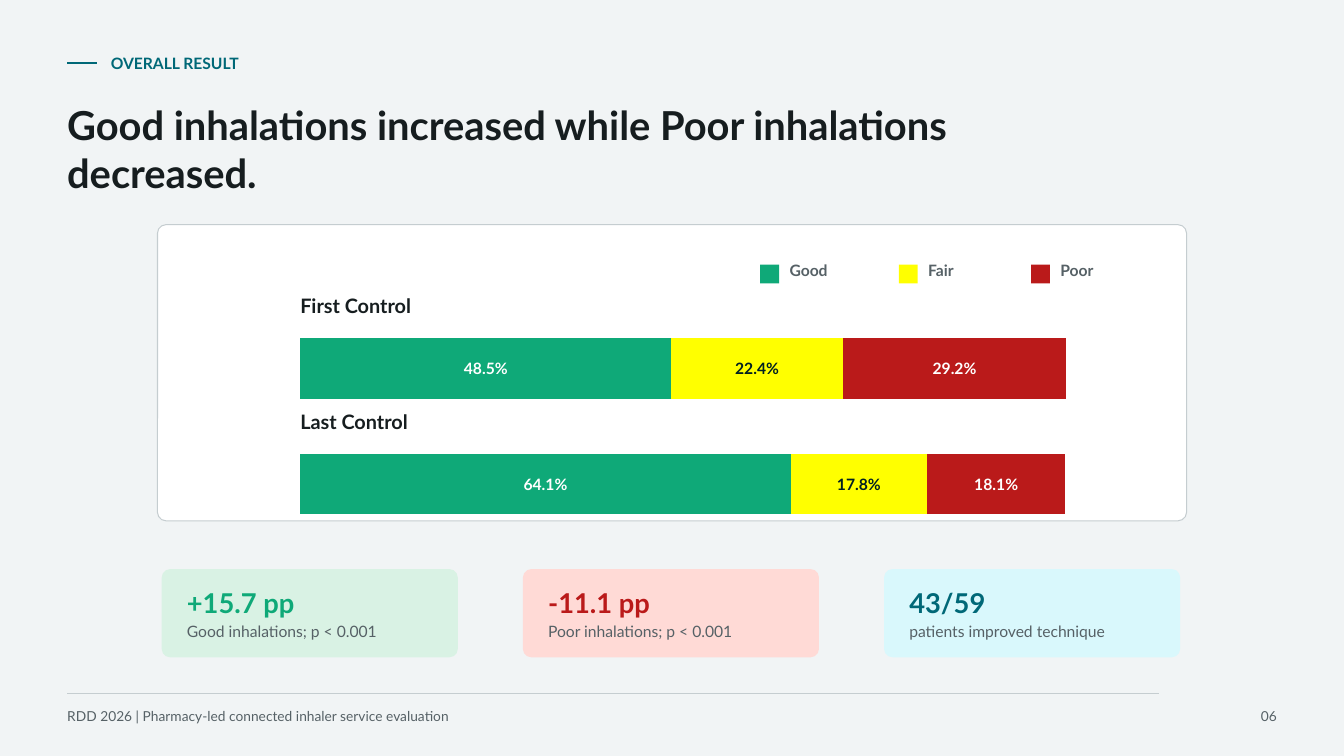
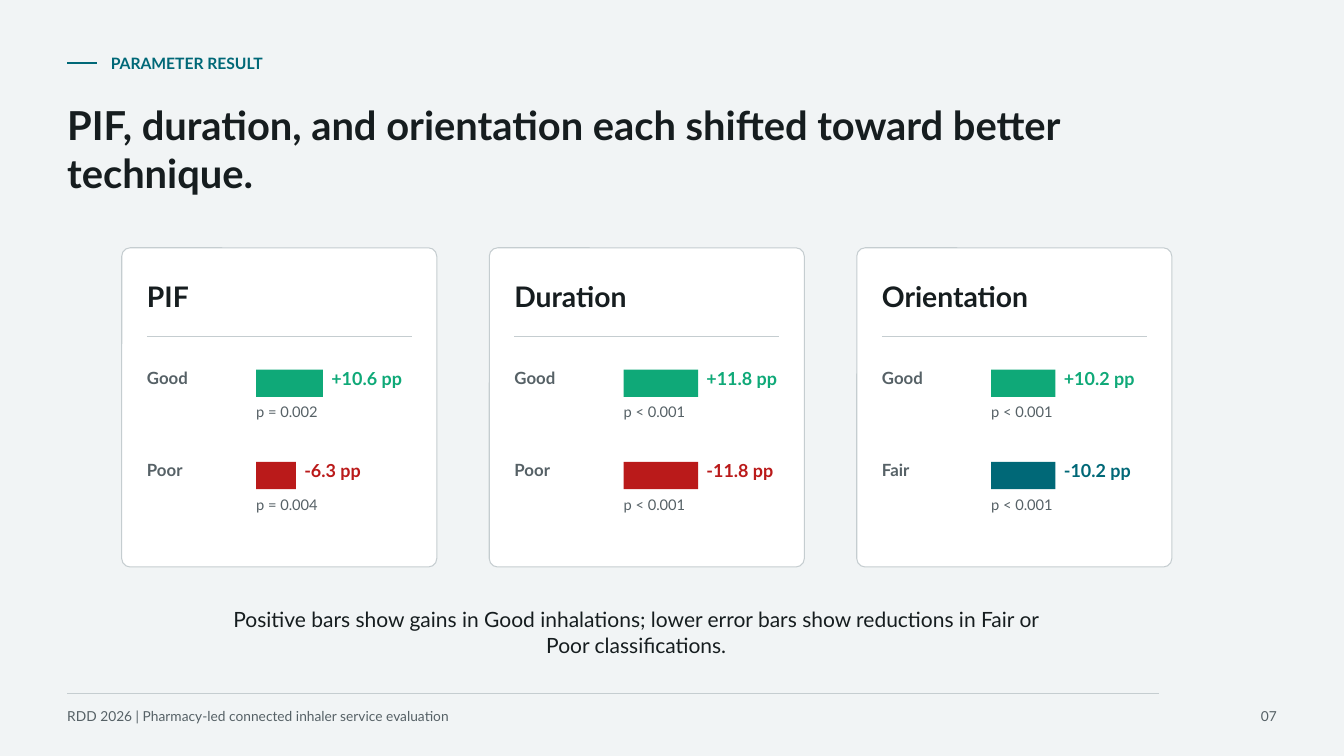
from lxml import etree
from pptx import Presentation
from pptx import util as u
from pptx.chart import data as cd
from pptx.dml.color import RGBColor
from pptx.enum import chart as ch, shapes, text
from pptx.oxml.ns import qn

PAPER = RGBColor(0xF1, 0xF4, 0xF5)
WHITE = RGBColor(0xFF, 0xFF, 0xFF)
INK = RGBColor(0x16, 0x1D, 0x1F)
DARK = RGBColor(0x00, 0x20, 0x22)
MUTED = RGBColor(0x56, 0x61, 0x66)
RULE = RGBColor(0xC5, 0xCD, 0xD0)
TEAL = RGBColor(0x00, 0x68, 0x77)
GREEN = RGBColor(0x0F, 0xA9, 0x78)
YELLOW = RGBColor(0xFF, 0xFF, 0x00)
RED = RGBColor(0xBA, 0x1A, 0x1A)
PALE_GREEN = RGBColor(0xD9, 0xF2, 0xE4)
PALE_RED = RGBColor(0xFF, 0xDA, 0xD6)
PALE_TEAL = RGBColor(0xD9, 0xF8, 0xFC)

FONT = "Lato"
FOOTER = "RDD 2026 | Pharmacy-led connected inhaler service evaluation"
COLS, ROWS = 160, 90
MARGIN = 8
LEFT, CENTER, RIGHT = text.PP_ALIGN.LEFT, text.PP_ALIGN.CENTER, text.PP_ALIGN.RIGHT


class Deck:
    def __init__(self):
        self.prs = Presentation()
        self.prs.slide_width = u.Inches(13.33)
        self.prs.slide_height = u.Inches(7.5)
        fill = self.prs.slide_master.background.fill
        fill.solid()
        fill.fore_color.rgb = PAPER
        self.s = None

    def x(self, cols):
        return round(self.prs.slide_width * cols / COLS)

    def y(self, rows):
        return round(self.prs.slide_height * rows / ROWS)

    def box(self, left, top, width, height):
        return self.x(left), self.y(top), self.x(width), self.y(height)

    def slide(self, number, kicker, title, title_width):
        self.s = self.prs.slides.add_slide(self.prs.slide_layouts[6])
        self.line(MARGIN, 7.5, 3.5, TEAL, 1.5)
        self.text(kicker, 13.2, 6, 53.75, 3, 11.2, TEAL, True,
                  anchor=text.MSO_ANCHOR.MIDDLE)
        self.text(title, MARGIN, 12, title_width, 11.5, 28.5, INK, True)
        self.line(MARGIN, 82.55, 130, RULE)
        self.text(FOOTER, MARGIN, 84.25, 95, 2.75, 9.8, MUTED)
        self.text(number, 145, 84.25, 7, 2.75, 9.8, MUTED, align=RIGHT)

    def text(self, words, left, top, width, height, size, color,
             bold=False, align=LEFT, anchor=text.MSO_ANCHOR.TOP):
        tf = self.s.shapes.add_textbox(*self.box(left, top, width, height)).text_frame
        tf.word_wrap = True
        tf.vertical_anchor = anchor
        tf.margin_left = tf.margin_right = tf.margin_top = tf.margin_bottom = 0
        tf.text = words
        p = tf.paragraphs[0]
        p.alignment = align
        f = p.runs[0].font
        f.name, f.size, f.bold = FONT, u.Pt(size), bold
        f.color.rgb = color

    def block(self, left, top, width, height, fill, radius=None, border=None):
        kind = shapes.MSO_SHAPE.ROUNDED_RECTANGLE if radius else shapes.MSO_SHAPE.RECTANGLE
        sp = self.s.shapes.add_shape(kind, *self.box(left, top, width, height))
        sp.shadow.inherit = False
        sp.fill.solid()
        sp.fill.fore_color.rgb = fill
        if radius:
            sp.adjustments[0] = radius / min(width, height)
        if border:
            sp.line.color.rgb = border
            sp.line.width = u.Pt(0.75)
        else:
            sp.line.fill.background()

    def card(self, left, top, width, height):
        self.block(left, top, width, height, WHITE, 1, RULE)

    def line(self, left, top, width, color, weight=0.75):
        y = self.y(top)
        c = self.s.shapes.add_connector(
            shapes.MSO_CONNECTOR.STRAIGHT, self.x(left), y, self.x(left + width), y)
        c.line.color.rgb = color
        c.line.width = u.Pt(weight)
        etree.SubElement(c._element.spPr, qn("a:effectLst"))

    def stacked_bars(self, left, top, width, height, categories, series, gap):
        data = cd.CategoryChartData(number_format='0.0"%"')
        data.categories = categories
        for name, values, *_ in series:
            data.add_series(name, values)
        chart = self.s.shapes.add_chart(
            ch.XL_CHART_TYPE.BAR_STACKED, *self.box(left, top, width, height), data).chart
        chart.has_legend = chart.has_title = False
        chart.font.name, chart.font.size, chart.font.bold = FONT, u.Pt(11.2), True
        chart.category_axis.reverse_order = True
        chart.category_axis.visible = False
        axis = chart.value_axis
        axis.minimum_scale = 0
        axis.maximum_scale = max(map(sum, zip(*(values for _, values, *_ in series))))
        axis.has_major_gridlines = False
        axis.visible = False
        plot = chart.plots[0]
        plot.gap_width, plot.overlap, plot.vary_by_categories = gap, 100, False
        for bar, (_, _, fill, ink) in zip(plot.series, series):
            bar.format.fill.solid()
            bar.format.fill.fore_color.rgb = fill
            labels = bar.data_labels
            labels.show_value = True
            labels.position = ch.XL_LABEL_POSITION.CENTER
            labels.number_format = '0.0"%"'
            labels.number_format_is_linked = False
            labels.font.name, labels.font.size, labels.font.bold = FONT, u.Pt(11.2), True
            labels.font.color.rgb = ink
        self.fill_frame(chart)

    def fill_frame(self, chart):
        area = chart._chartSpace.chart.plotArea
        for old in area.findall(qn("c:layout")):
            area.remove(old)
        layout = etree.Element(qn("c:layout"))
        manual = etree.SubElement(layout, qn("c:manualLayout"))
        for tag, val in (("layoutTarget", "inner"), ("xMode", "edge"), ("yMode", "edge"),
                         ("x", "0"), ("y", "0"), ("w", "1"), ("h", "1")):
            etree.SubElement(manual, qn("c:" + tag)).set("val", val)
        area.insert(0, layout)

    def legend(self, left, top, name, color):
        self.block(left, top + 0.5, 2.25, 2.25, color)
        self.text(name, left + 3.5, top, 11, 3, 11.2, MUTED, True)

    def stat(self, left, top, value, caption, color, fill):
        self.block(left, top, 35.25, 10.5, fill, 1)
        self.text(value, left + 3, top + 2, 28, 3.75, 19.5, color, True)
        self.text(caption, left + 3, top + 6.25, 28, 2.75, 11.2, MUTED)

    def change(self, left, top, name, points, p_value, color):
        bar_left, bar_width = left + 13, abs(points) * 0.75
        self.text(name, left, top, 12, 2.75, 12, MUTED, True)
        self.block(bar_left, top + 0.25, bar_width, 3.25, color)
        self.text(f"{points:+.1f} pp", bar_left + bar_width + 1, top, 11, 2.75,
                  12.8, color, True)
        self.text(p_value, bar_left, top + 4.25, 18.75, 2.5, 10.5, MUTED)

    def parameter(self, left, top, name, changes):
        inner = left + 3
        self.card(left, top, 37.5, 38)
        self.text(name, inner, top + 3.75, 30, 3.75, 20.2, INK, True)
        self.line(inner, top + 10.55, 31.5, RULE)
        for i, change in enumerate(changes):
            self.change(inner, top + 14.25 + 11 * i, *change)


def overall(d):
    d.slide("06", "OVERALL RESULT",
            "Good inhalations increased while Poor inhalations decreased.", 115)
    d.card(18.75, 26.75, 122.5, 35.25)
    series = [("Good", (48.5, 64.1), GREEN, WHITE),
              ("Fair", (22.4, 17.8), YELLOW, DARK),
              ("Poor", (29.2, 18.1), RED, WHITE)]
    for left, (name, _, color, _) in zip((90.5, 107, 122.75), series):
        d.legend(left, 31, name, color)
    controls = ["First Control", "Last Control"]
    left, pitch = 35.75, 13.75
    d.stacked_bars(left, 37, 91.2, pitch * len(controls), controls, series, 90)
    for i, name in enumerate(controls):
        d.text(name, left, 35 + pitch * i, 27.5, 3.25, 14.2, INK, True)
    stats = [("+15.7 pp", "Good inhalations; p < 0.001", GREEN, PALE_GREEN),
             ("-11.1 pp", "Poor inhalations; p < 0.001", RED, PALE_RED),
             ("43/59", "patients improved technique", TEAL, PALE_TEAL)]
    for i, stat in enumerate(stats):
        d.stat(19.25 + 43 * i, 67.75, *stat)


def parameters(d):
    d.slide("07", "PARAMETER RESULT",
            "PIF, duration, and orientation each shifted toward better technique.", 127.5)
    cards = [("PIF", [("Good", 10.6, "p = 0.002", GREEN),
                      ("Poor", -6.3, "p = 0.004", RED)]),
             ("Duration", [("Good", 11.8, "p < 0.001", GREEN),
                           ("Poor", -11.8, "p < 0.001", RED)]),
             ("Orientation", [("Good", 10.2, "p < 0.001", GREEN),
                              ("Fair", -10.2, "p < 0.001", TEAL)])]
    for i, card in enumerate(cards):
        d.parameter(14.5 + 43.75 * i, 29.5, *card)
    d.text("Positive bars show gains in Good inhalations; lower error bars show "
           "reductions in Fair or Poor classifications.",
           25.75, 72.25, 100, 5.25, 15, INK, align=CENTER)


def main():
    d = Deck()
    overall(d)
    parameters(d)
    d.prs.save("out.pptx")


if __name__ == "__main__":
    main()
